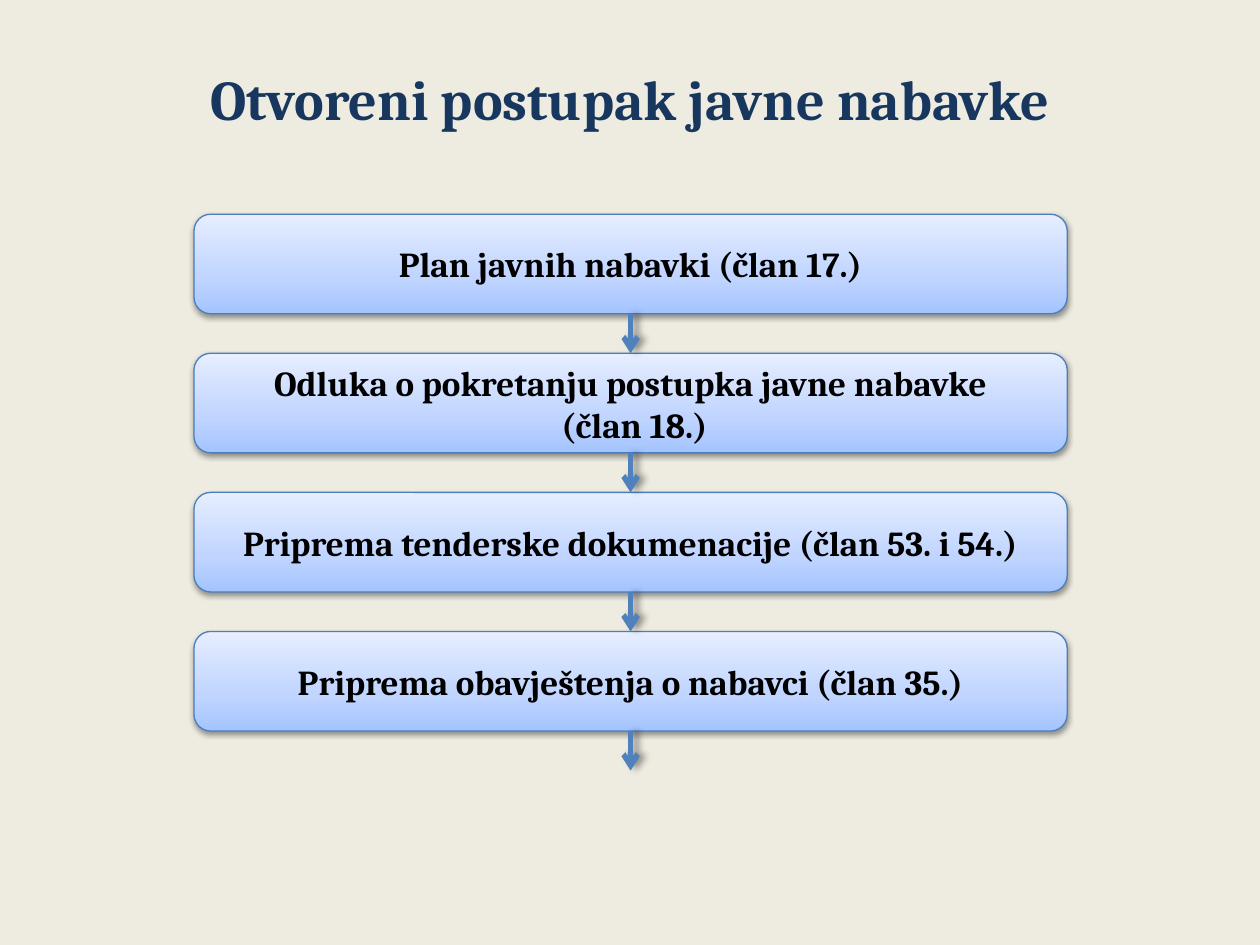
from copy import deepcopy

from lxml import etree
from pptx import Presentation
from pptx.dml.color import RGBColor
from pptx.enum.shapes import MSO_CONNECTOR, MSO_SHAPE
from pptx.enum.text import MSO_ANCHOR, PP_ALIGN
from pptx.oxml.ns import qn
from pptx.util import Inches, Pt

ROUNDED = MSO_SHAPE.ROUNDED_RECTANGLE
STRAIGHT = MSO_CONNECTOR.STRAIGHT
MIDDLE = MSO_ANCHOR.MIDDLE
CENTER = PP_ALIGN.CENTER
TITLE_ONLY = 5

FONT = "Cambria"
COLORS = {
    "background": "EEECE1",
    "title": "17375E",
    "text": "000000",
    "outline": "4B7EBC",
    "arrow": "4F81BD",
    "shadow": "000000",
}
STEP_GRADIENT = [(0, "A4C4FF"), (0.35, "BFD4FF"), (1, "E6EEFF")]
STEPS = [
    ["Plan javnih nabavki (član 17.)"],
    ["Odluka o pokretanju postupka javne nabavke", " (član 18.)"],
    ["Priprema tenderske dokumenacije (član 53. i 54.)"],
    ["Priprema obavještenja o nabavci (član 35.)"],
]
STEP_HEIGHT = 0.79
STEP_PITCH = 1.104


def color(name):
    return RGBColor.from_string(COLORS[name])


def add_shadow(shape, opacity, blur, distance, angle):
    properties = shape._element.spPr
    for old in properties.findall(qn("a:effectLst")):
        properties.remove(old)
    effects = etree.SubElement(properties, qn("a:effectLst"))
    shadow = etree.SubElement(
        effects, qn("a:outerShdw"), blurRad=str(Pt(blur)), dist=str(Pt(distance)),
        dir=str(angle * 60000), rotWithShape="0")
    tint = etree.SubElement(shadow, qn("a:srgbClr"), val=COLORS["shadow"])
    etree.SubElement(tint, qn("a:alpha"), val=str(opacity * 1000))


def fill_gradient(shape, stops):
    shape.fill.gradient()
    shape.fill.gradient_angle = 90
    stop_list = shape._element.spPr.find(".//" + qn("a:gsLst"))
    while len(stop_list) < len(stops):
        stop_list.append(deepcopy(stop_list[0]))
    for stop, (position, value) in zip(shape.fill.gradient_stops, stops):
        stop.position = position
        stop.color.rgb = RGBColor.from_string(value)


def write_text(frame, lines, size, color_name):
    frame.word_wrap = True
    frame.vertical_anchor = MIDDLE
    frame.text = "\n".join(lines)
    for para in frame.paragraphs:
        para.alignment = CENTER
        para.font.name = FONT
        para.font.size = Pt(size)
        para.font.bold = True
        para.font.color.rgb = color(color_name)


def place_title(page, left, top, width, height):
    title = page.shapes.title
    title.left, title.top = Inches(left), Inches(top)
    title.width, title.height = Inches(width), Inches(height)
    write_text(title.text_frame, ["Otvoreni postupak javne nabavke"], 32, "title")


def add_step(page, lines, left, top, width, height):
    step = page.shapes.add_shape(
        ROUNDED, Inches(left), Inches(top), Inches(width), Inches(height))
    fill_gradient(step, STEP_GRADIENT)
    step.line.color.rgb = color("outline")
    step.line.width = Pt(0.75)
    add_shadow(step, 38, 3.1, 1.6, 90)
    write_text(step.text_frame, lines, 20, "text")


def add_arrow(page, x, top, bottom):
    arrow = page.shapes.add_connector(
        STRAIGHT, Inches(x), Inches(top), Inches(x), Inches(bottom))
    arrow.line.color.rgb = color("arrow")
    arrow.line.width = Pt(3)
    etree.SubElement(arrow.line._get_or_add_ln(), qn("a:tailEnd"), type="arrow")
    add_shadow(arrow, 40, 4, 3, 0)


def add_flow(page, left, top, width):
    tops = [top + index * STEP_PITCH for index in range(len(STEPS))]
    for lines, step_top in zip(STEPS, tops):
        add_step(page, lines, left, step_top, width, STEP_HEIGHT)
    for step_top in tops:
        add_arrow(page, left + width / 2, step_top + STEP_HEIGHT, step_top + STEP_PITCH)


def main():
    deck = Presentation()
    deck.slide_width, deck.slide_height = Inches(10), Inches(7.5)
    page = deck.slides.add_slide(deck.slide_layouts[TITLE_ONLY])
    page.background.fill.solid()
    page.background.fill.fore_color.rgb = color("background")
    place_title(page, 0.5, 0.3, 9, 0.96)
    add_flow(page, 1.54, 1.7, 6.93)
    deck.save("out.pptx")


if __name__ == "__main__":
    main()
